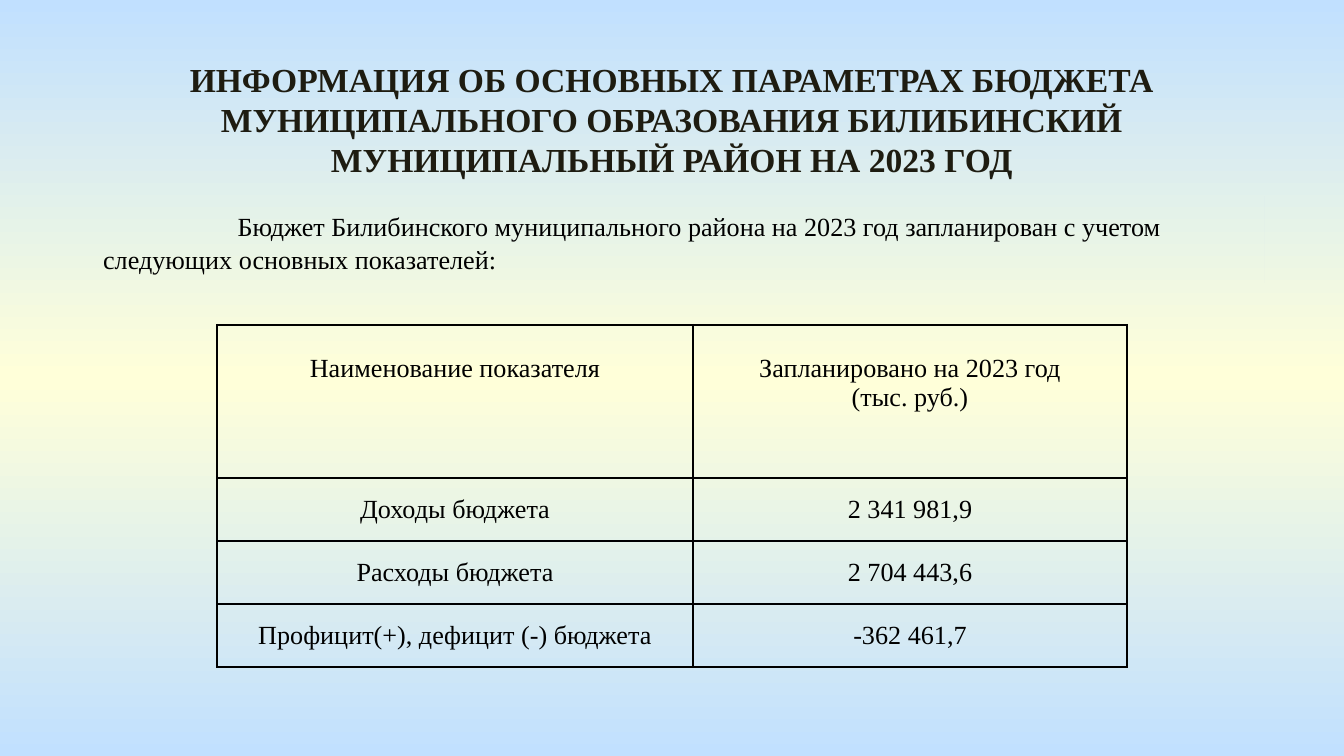
import copy

import pptx
import pptx.dml.color
import pptx.enum.shapes
import pptx.enum.text
import pptx.oxml
import pptx.oxml.ns
import pptx.util

Pt = pptx.util.Pt
qn = pptx.oxml.ns.qn
ALIGN = pptx.enum.text.PP_ALIGN
ANCHOR = pptx.enum.text.MSO_ANCHOR


def rgb(value):
    return pptx.dml.color.RGBColor.from_string(value)


def write(tf, text, size=14, color="000000", bold=False, align=ALIGN.CENTER,
          spacing=None):
    """Fill a text frame, one paragraph for each line of text."""
    tf.word_wrap = True
    for i, line in enumerate(text.split("\n")):
        p = tf.paragraphs[0] if i == 0 else tf.add_paragraph()
        p.alignment = align
        if spacing:
            p.line_spacing = Pt(spacing)
        r = p.add_run()
        r.text = line
        r.font.name = "Times New Roman"
        r.font.size = Pt(size)
        r.font.bold = bold
        r.font.color.rgb = rgb(color)


prs = pptx.Presentation()
prs.slide_width, prs.slide_height = Pt(720), Pt(405)
s = prs.slides.add_slide(prs.slide_layouts[5])

# Background: blue, yellow, blue from top to bottom
fill = s.background.fill
fill.gradient()
fill.gradient_angle = 90
stops = s.element.find(".//" + qn("a:gsLst"))
stops.append(copy.deepcopy(stops[0]))
for stop, position, color in zip(fill.gradient_stops, (0, 0.5, 1),
                                 ("C1E0FF", "FFFFD9", "C1E0FF")):
    stop.position = position
    stop.color.rgb = rgb(color)

# Title
title = s.shapes.title
title.left, title.top, title.width, title.height = Pt(25.2), Pt(27.5), Pt(669.6), Pt(72.7)
title.text_frame.vertical_anchor = ANCHOR.MIDDLE
write(title.text_frame,
      "ИНФОРМАЦИЯ ОБ ОСНОВНЫХ ПАРАМЕТРАХ БЮДЖЕТА МУНИЦИПАЛЬНОГО ОБРАЗОВАНИЯ "
      "БИЛИБИНСКИЙ МУНИЦИПАЛЬНЫЙ РАЙОН НА 2023 ГОД",
      size=18, color="1E1C11", bold=True, spacing=21.4)

# Introduction with an indented first line, filled with the slide background
intro = s.shapes.add_shape(pptx.enum.shapes.MSO_SHAPE.RECTANGLE,
                           Pt(48.2), Pt(105.1), Pt(629.3), Pt(46))
intro.shadow.inherit = False
intro.line.fill.background()
intro.element.remove(intro.element.find(qn("p:style")))
intro.element.set("useBgFill", "1")
tf = intro.text_frame
tf.vertical_anchor = ANCHOR.TOP
tf.margin_top = Pt(7)
write(tf, "Бюджет Билибинского муниципального района на 2023 год запланирован "
      "с учетом следующих основных показателей:", align=ALIGN.LEFT, spacing=17.6)
tf.paragraphs[0]._p.get_or_add_pPr().set("indent", str(Pt(72)))

# Budget table
rows = [
    ("Наименование показателя", "Запланировано на 2023 год\n(тыс. руб.)"),
    ("Доходы бюджета", "2 341 981,9"),
    ("Расходы бюджета", "2 704 443,6"),
    ("Профицит(+), дефицит (-) бюджета", "-362 461,7"),
]
widths = (255, 232.5)
heights = (82, 33.8, 33.8, 33.8)
table = s.shapes.add_table(len(rows), len(widths), Pt(116.3), Pt(174),
                           Pt(sum(widths)), Pt(sum(heights))).table
for column, width in zip(table.columns, widths):
    column.width = Pt(width)
for i, (row, texts) in enumerate(zip(table.rows, rows)):
    row.height = Pt(heights[i])
    for cell, text in zip(row.cells, texts):
        cell.margin_left = cell.margin_right = Pt(5)
        cell.margin_top = Pt(16 if i == 0 else 0)
        cell.margin_bottom = 0
        cell.vertical_anchor = ANCHOR.TOP if i == 0 else ANCHOR.MIDDLE
        write(cell.text_frame, text)
        cell.fill.background()
        tcPr = cell._tc.get_or_add_tcPr()
        for k, side in enumerate(("lnL", "lnR", "lnT", "lnB")):
            tcPr.insert(k, pptx.oxml.parse_xml(
                f'<a:{side} {pptx.oxml.ns.nsdecls("a")} w="{Pt(1)}"><a:solidFill>'
                f'<a:srgbClr val="000000"/></a:solidFill></a:{side}>'))

prs.save("out.pptx")
